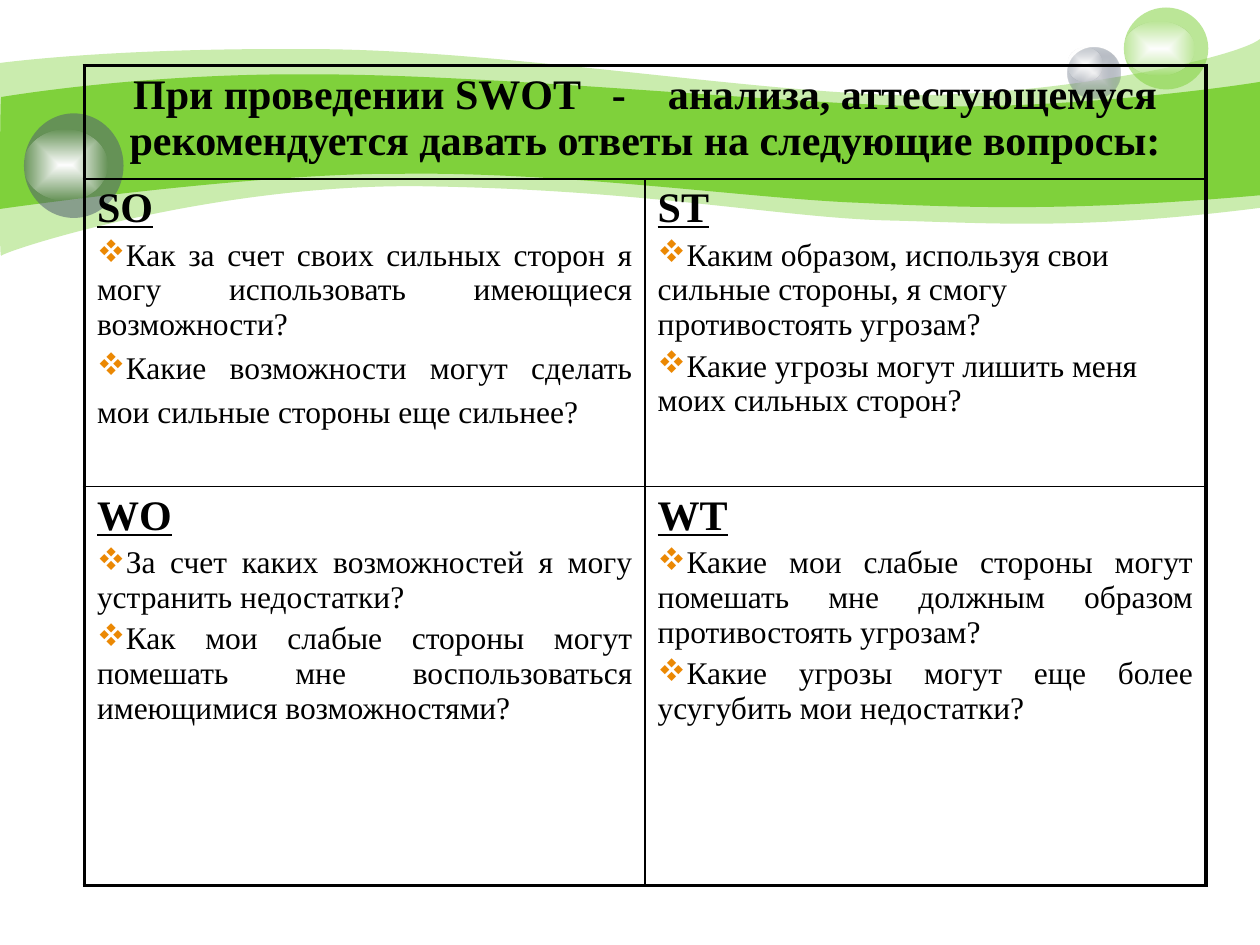
from lxml import etree
from pptx import Presentation
from pptx.dml.color import RGBColor
from pptx.enum.shapes import MSO_SHAPE
from pptx.enum.text import PP_ALIGN
from pptx.oxml.ns import qn
from pptx.util import Inches, Pt

OVAL = MSO_SHAPE.OVAL
LEFT, CENTER, JUSTIFY = PP_ALIGN.LEFT, PP_ALIGN.CENTER, PP_ALIGN.JUSTIFY

SERIF = "Times New Roman"
BLACK, WHITE, GREEN, SLATE, ORANGE = "000000", "FFFFFF", "7FD13B", "4E5B6F", "EB8803"
BLANK_LAYOUT = 6
THICK, THIN = 2.25, 1

# Each wave: start point, then edges; six numbers make a curve, two a line
LIGHT_WAVE = [
    (0, 0.5),
    (0.24, 0.47, 1.07, 0.38, 2.47, 0.39), (3.86, 0.39, 5.75, 0.7, 6.99, 0.75),
    (8.22, 0.8, 9.8, 0.47, 10, 0.31), (10, 1.65),
    (8.58, 1.83, 7.87, 1.77, 7.05, 1.75), (6.22, 1.73, 5.15, 1.51, 3.43, 1.48),
    (1.72, 1.44, 0.04, 1.99, 0.01, 2.03), (-0.01, 2.08, 0, 0.75, 0, 0.5),
]
GREEN_WAVE = [
    (0.01, 0.77),
    (0.02, 0.77, 1.1, 0.58, 2.48, 0.59), (3.86, 0.59, 5.95, 0.8, 7.18, 0.84),
    (8.41, 0.88, 9.76, 0.69, 10, 0.65), (10, 1.55),
    (8.53, 1.68, 7.65, 1.65, 6.82, 1.61), (5.99, 1.58, 4.47, 1.36, 3.17, 1.38),
    (2.03, 1.37, -0.02, 1.66, -0.01, 1.66), (0, 1.66, 0, 0.77, 0.01, 0.77),
]

HEADING = ("При проведении SWOT   -    анализа, аттестующемуся "
           "рекомендуется давать ответы на следующие вопросы:")
# Quadrant: title, question alignment, questions, trailing space (size, font)
QUADRANTS = [
    [("SO", JUSTIFY,
      ["Как за счет своих сильных сторон я могу использовать имеющиеся возможности?",
       "Какие возможности могут сделать мои сильные стороны еще сильнее?"], (24, SERIF)),
     ("ST", LEFT,
      ["Каким образом, используя свои сильные стороны, я смогу противостоять угрозам?",
       "Какие угрозы могут лишить меня моих сильных сторон?"], (16, "Arial"))],
    [("WO", JUSTIFY,
      ["За счет каких возможностей я могу устранить недостатки?",
       "Как мои слабые стороны могут помешать мне воспользоваться имеющимися "
       "возможностями?"], (18, SERIF)),
     ("WT", JUSTIFY,
      ["Какие мои слабые стороны могут помешать мне должным образом противостоять угрозам?",
       "Какие угрозы могут еще более усугубить мои недостатки?"], (18, SERIF))],
]


def rgb(color):
    return RGBColor.from_string(color)


def add_child(parent, tag, **attributes):
    return etree.SubElement(parent, qn(tag), **attributes)


def fill_solid(shape, color, alpha=100):
    shape.shadow.inherit = False
    shape.line.fill.background()
    shape.fill.solid()
    shape.fill.fore_color.rgb = rgb(color)
    if alpha < 100:
        value = shape.fill._xPr.find(qn("a:solidFill"))[0]
        add_child(value, "a:alpha", val=str(alpha * 1000))


def fill_glow(shape, center, edge, edge_alpha):
    """Gradient that fades from the centre of the shape to its edge."""
    fill_solid(shape, center)
    solid = shape.fill._xPr.find(qn("a:solidFill"))
    gradient = etree.Element(qn("a:gradFill"), rotWithShape="1")
    stops = add_child(gradient, "a:gsLst")
    for position, color, alpha in ((0, center, 100), (100, edge, edge_alpha)):
        stop = add_child(stops, "a:gs", pos=str(position * 1000))
        value = add_child(stop, "a:srgbClr", val=color)
        add_child(value, "a:alpha", val=str(alpha * 1000))
    focus = add_child(gradient, "a:path", path="shape")
    add_child(focus, "a:fillToRect", l="50000", t="50000", r="50000", b="50000")
    solid.getparent().replace(solid, gradient)


def add_wave(slide, edges, color, alpha=100):
    """Freeform through the edge ends, whose long edges then become curves."""
    ends = [(Inches(edge[-2]), Inches(edge[-1])) for edge in edges]
    builder = slide.shapes.build_freeform(*ends[0], scale=1.0)
    builder.add_line_segments(ends[1:], close=True)
    wave = builder.convert_to_shape()
    left, top = wave.left, wave.top
    lines = list(wave._element.iter(qn("a:lnTo")))
    for line, edge in zip(lines, edges[1:]):
        if len(edge) == 6:
            curve = etree.Element(qn("a:cubicBezTo"))
            for x, y in zip(edge[::2], edge[1::2]):
                add_child(curve, "a:pt", x=str(Inches(x) - left), y=str(Inches(y) - top))
            line.getparent().replace(line, curve)
    fill_solid(wave, color, alpha)


def add_oval(slide, *box):
    return slide.shapes.add_shape(OVAL, *map(Inches, box))


def add_shine(slide, *box):
    fill_glow(add_oval(slide, *box), WHITE, WHITE, 0)


def set_borders(cell, left, right, top, bottom):
    properties = cell._tc.get_or_add_tcPr()
    sides = (("a:lnL", left), ("a:lnR", right), ("a:lnT", top), ("a:lnB", bottom))
    for index, (tag, width) in enumerate(sides):
        line = etree.Element(qn(tag), w=str(Pt(width)))
        add_child(add_child(line, "a:solidFill"), "a:srgbClr", val=BLACK)
        properties.insert(index, line)


def style_text(paragraph, size, bold, underline=False, align=LEFT):
    paragraph.alignment = align
    font = paragraph.font
    font.name, font.size = SERIF, Pt(size)
    font.bold, font.underline = bold, underline
    font.color.rgb = rgb(BLACK)


def add_question(frame, question, align):
    paragraph = frame.add_paragraph()
    paragraph.add_run().text = question
    properties = paragraph._p.get_or_add_pPr()
    properties.set("marL", "0")
    properties.set("indent", "0")
    add_child(add_child(properties, "a:spcBef"), "a:spcPct", val="20000")
    add_child(add_child(properties, "a:buClr"), "a:srgbClr", val=ORANGE)
    # Wingdings shows this letter as a four-diamond bullet
    add_child(properties, "a:buFont", typeface="Wingdings", pitchFamily="2", charset="2")
    add_child(properties, "a:buChar", char="v")
    style_text(paragraph, 18, bold=False, align=align)
    return paragraph


def fill_quadrant(cell, title, align, questions, trailing):
    frame = cell.text_frame
    frame.text = title
    style_text(frame.paragraphs[0], 24, bold=True, underline=True)
    for question in questions:
        paragraph = add_question(frame, question, align)
    space = paragraph.add_run()
    space.text = " "
    space.font.size, space.font.name = Pt(trailing[0]), trailing[1]


def add_swot_table(slide):
    box = map(Inches, (0.67, 0.52, 8.9, 6.51))
    table = slide.shapes.add_table(3, 2, *box).table
    table.first_row = table.horz_banding = False
    for column in table.columns:
        column.width = Inches(4.45)
    for row, height in zip(table.rows, (0.9, 2.44, 3.17)):
        row.height = Inches(height)

    # Thick outer frame, thin inner lines; the heading row spans both columns
    for r in range(3):
        for c in range(2):
            cell = table.cell(r, c)
            cell.fill.background()
            set_borders(cell, THIN if c else THICK, THICK if c or r == 0 else THIN,
                        THIN if r else THICK, THICK if r == 2 else THIN)

    heading = table.cell(0, 0)
    heading.merge(table.cell(0, 1))
    heading.text_frame.text = HEADING
    style_text(heading.text_frame.paragraphs[0], 24, bold=True, align=CENTER)
    for r, quadrant_row in enumerate(QUADRANTS, start=1):
        for c, quadrant in enumerate(quadrant_row):
            fill_quadrant(table.cell(r, c), *quadrant)


def main():
    presentation = Presentation()
    presentation.slide_width, presentation.slide_height = Inches(10), Inches(7.5)
    slide = presentation.slides.add_slide(presentation.slide_layouts[BLANK_LAYOUT])

    # Background waves
    add_wave(slide, LIGHT_WAVE, GREEN, 41)
    add_wave(slide, GREEN_WAVE, GREEN)

    # Glossy balls
    fill_glow(add_oval(slide, 8.47, 0.38, 0.42, 0.4), "E3E3E5", SLATE, 31)
    add_shine(slide, 8.47, 0.38, 0.28, 0.27)
    fill_solid(add_oval(slide, 8.92, 0.06, 0.67, 0.65), GREEN, 53)
    add_shine(slide, 8.92, 0.17, 0.56, 0.43)
    fill_solid(add_oval(slide, 0.19, 0.9, 0.79, 0.83), SLATE, 53)
    add_shine(slide, 0.19, 1.03, 0.66, 0.56)

    add_swot_table(slide)
    presentation.save("out.pptx")


if __name__ == "__main__":
    main()
